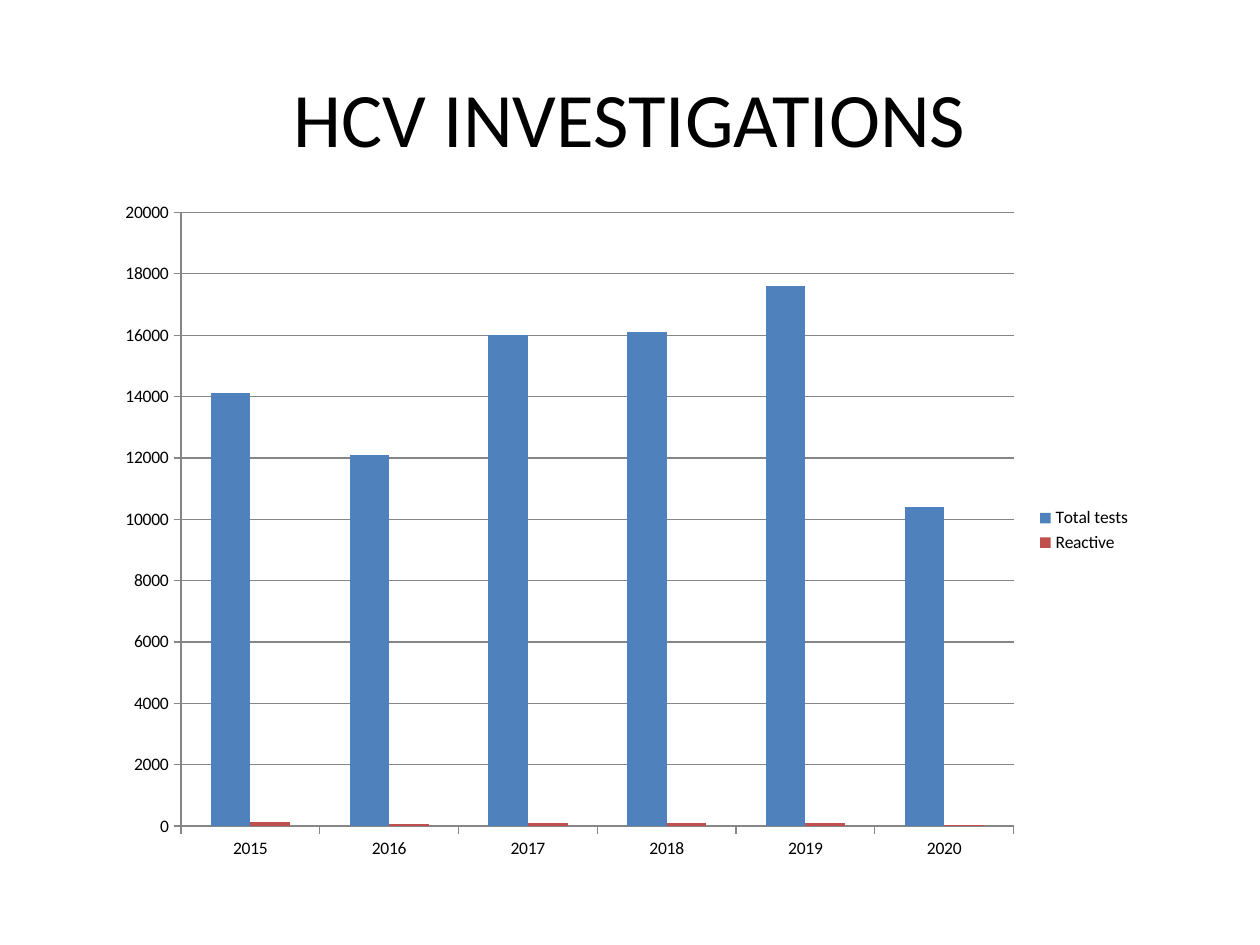
from dataclasses import dataclass

from pptx import Presentation
from pptx.chart.data import CategoryChartData
from pptx.dml.color import RGBColor
from pptx.enum.chart import XL_CHART_TYPE, XL_LEGEND_POSITION, XL_TICK_MARK
from pptx.enum.text import MSO_ANCHOR, PP_ALIGN
from pptx.util import Inches, Pt


@dataclass(frozen=True)
class Theme:
    font: str = "Calibri"
    text: str = "000000"
    grid: str = "868686"
    series: tuple = ("4F81BD", "C0504D")
    title_size: int = 44
    chart_size: int = 10


class SlideBuilder:
    def __init__(self, deck, theme):
        self.theme = theme
        self.slide = deck.slides.add_slide(deck.slide_layouts[5])

    def style_font(self, font, size):
        formats = {"name": self.theme.font, "size": Pt(size), "bold": False}
        for attribute, value in formats.items():
            setattr(font, attribute, value)
        font.color.rgb = RGBColor.from_string(self.theme.text)

    def style_line(self, line):
        line.color.rgb = RGBColor.from_string(self.theme.grid)
        line.width = Pt(0.75)

    def title(self, wording, left, top, width, height):
        heading = self.slide.shapes.title
        place = {"left": left, "top": top, "width": width, "height": height}
        for attribute, value in place.items():
            setattr(heading, attribute, Inches(value))
        frame = heading.text_frame
        frame.text = wording
        frame.vertical_anchor = MSO_ANCHOR.MIDDLE
        frame.paragraphs[0].alignment = PP_ALIGN.CENTER
        self.style_font(frame.paragraphs[0].runs[0].font, self.theme.title_size)

    def column_chart(self, years, counts, left, top, width, height):
        data = CategoryChartData()
        data.categories = years
        for name, values in counts.items():
            data.add_series(name, values)
        chart = self.slide.shapes.add_chart(
            XL_CHART_TYPE.COLUMN_CLUSTERED,
            *map(Inches, (left, top, width, height)), data).chart
        chart.has_title = False
        self.style_font(chart.font, self.theme.chart_size)

        # Columns
        columns = chart.plots[0]
        for attribute, value in {"gap_width": 150, "overlap": 0,
                                 "vary_by_categories": False}.items():
            setattr(columns, attribute, value)
        for series, color in zip(columns.series, self.theme.series):
            series.format.fill.solid()
            series.format.fill.fore_color.rgb = RGBColor.from_string(color)

        # Axes and gridlines
        for axis in (chart.category_axis, chart.value_axis):
            axis.major_tick_mark = XL_TICK_MARK.OUTSIDE
            axis.minor_tick_mark = XL_TICK_MARK.NONE
            self.style_line(axis.format.line)
        scale = {"minimum_scale": 0, "maximum_scale": 20000,
                 "major_unit": 2000, "has_major_gridlines": True}
        for attribute, value in scale.items():
            setattr(chart.value_axis, attribute, value)
        self.style_line(chart.value_axis.major_gridlines.format.line)

        # Legend
        chart.has_legend = True
        chart.legend.position = XL_LEGEND_POSITION.RIGHT
        chart.legend.include_in_layout = False


def main():
    deck = Presentation()
    deck.slide_width, deck.slide_height = Inches(10), Inches(7.5)
    builder = SlideBuilder(deck, Theme())

    # Heading
    builder.title("HCV INVESTIGATIONS", 0.5, 0.3, 9, 1.25)

    # Tests per year
    years = [str(year) for year in range(2015, 2021)]
    counts = {
        "Total tests": (14100, 12100, 16000, 16100, 17600, 10400),
        "Reactive": (140, 80, 110, 110, 110, 50),
    }
    builder.column_chart(years, counts, 0.83, 1.5, 8.25, 5.42)

    deck.save("out.pptx")


if __name__ == "__main__":
    main()
